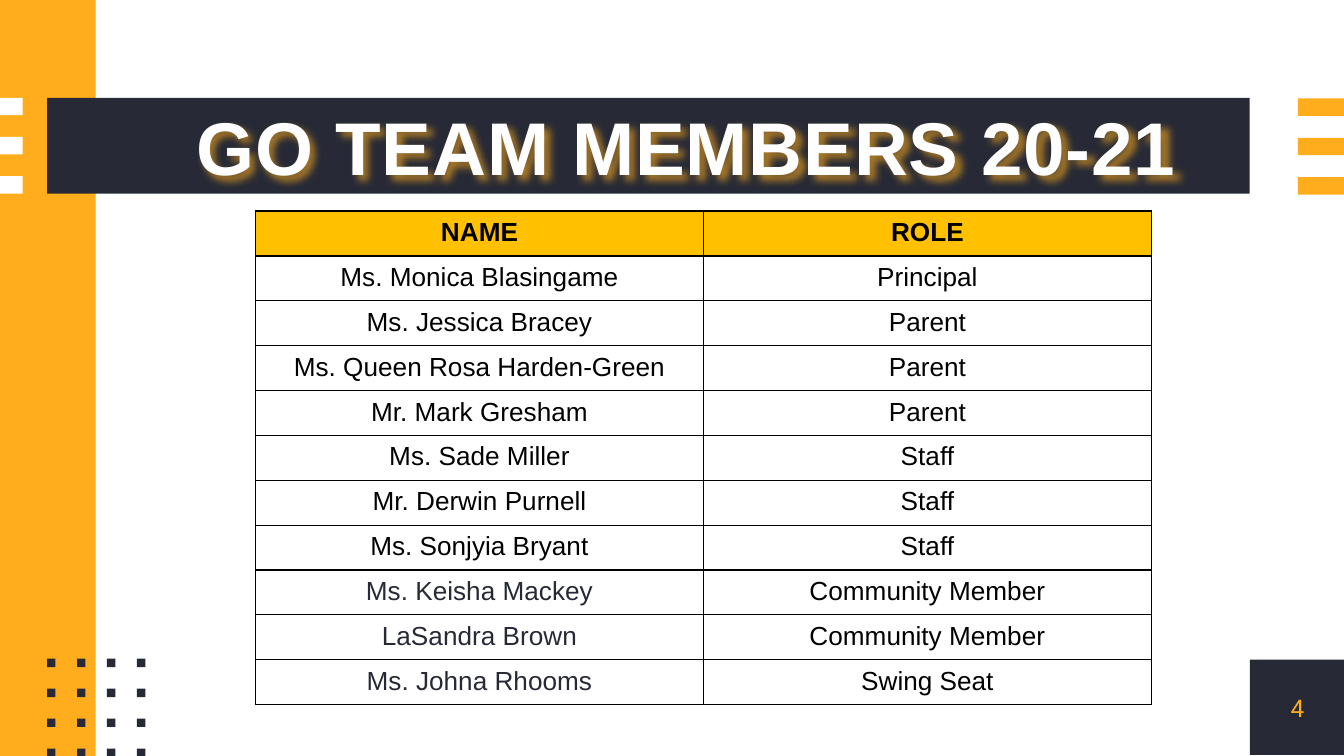
from itertools import product
from lxml.etree import SubElement as Sub, Element as Elem
from pptx import Presentation as Deck
from pptx.dml.color import RGBColor as Rgb
from pptx.enum.shapes import MSO_SHAPE as Kind
from pptx.enum.text import MSO_ANCHOR as Anchor, PP_ALIGN as Align
from pptx.oxml.ns import qn
from pptx.util import Cm, Pt

HUES = {"dark": "272A36", "gold": "FFAD1D", "head": "FFC000",
        "white": "FFFFFF", "pale": "FEFEFE", "black": "000000"}

TEAM = [
    ("NAME", "ROLE"),
    ("Ms. Monica Blasingame", "Principal"),
    ("Ms. Jessica Bracey", "Parent"),
    ("Ms. Queen Rosa Harden-Green", "Parent"),
    ("Mr. Mark Gresham", "Parent"),
    ("Ms. Sade Miller", "Staff"),
    ("Mr. Derwin Purnell", "Staff"),
    ("Ms. Sonjyia Bryant", "Staff"),
    ("Ms. Keisha Mackey", "Community Member"),
    ("LaSandra Brown", "Community Member"),
    ("Ms. Johna Rhooms", "Swing Seat"),
]


def tint(hue):
    return Rgb.from_string(HUES[hue])


def paint(host, hue):
    fill = Sub(host, qn("a:solidFill"))
    return Sub(fill, qn("a:srgbClr"), val=HUES[hue])


def block(slide, box, hue):
    rect = slide.shapes.add_shape(Kind.RECTANGLE, *map(Cm, box))
    rect.shadow.inherit = False
    rect.fill.solid()
    rect.fill.fore_color.rgb = tint(hue)
    rect.line.fill.background()
    return rect


def write(frame, text, size, hue, face="Arial", bold=False):
    para = frame.paragraphs[0]
    para.alignment = Align.CENTER
    run = para.add_run()
    run.text = text
    font = run.font
    font.size, font.name, font.bold = Pt(size), face, bold
    font.color.rgb = tint(hue)
    return run


def bars(slide, box, hue):
    left, top, width, height = box
    thick = 0.33
    step = (height - thick) / 2
    for row in range(3):
        block(slide, (left, top + row * step, width, thick), hue)


def dots(slide, box):
    left, top, width, height = box
    side = 0.16
    for row, col in product(range(4), repeat=2):
        x = left + col * (width - side) / 3
        y = top + row * (height - side) / 3
        block(slide, (x, y, side, side), "dark")


def page(slide, box):
    frame = block(slide, box, "dark").text_frame
    frame.margin_left = frame.margin_right = 0
    frame.margin_top = frame.margin_bottom = 0
    frame.vertical_anchor = Anchor.MIDDLE
    write(frame, "4", 13, "gold", "Roboto")


def title(slide, box):
    text = slide.shapes.add_textbox(*map(Cm, box))
    text.text_frame.word_wrap = False
    run = write(text.text_frame, "GO TEAM MEMBERS 20-21", 40, "pale", bold=True)
    props = run.font._element
    props.set("spc", "50")
    line = Elem(qn("a:ln"), w=str(Pt(0.75)))
    paint(line, "gold")
    props.insert(0, line)
    glow = Sub(text._element.spPr, qn("a:effectLst"))
    shade = Sub(glow, qn("a:outerShdw"), blurRad=str(Pt(4)),
                dist=str(Pt(3)), dir="2700000", algn="tl")
    color = Sub(shade, qn("a:srgbClr"), val=HUES["gold"])
    Sub(color, qn("a:alpha"), val="60000")


def edge(cell):
    props = cell._tc.get_or_add_tcPr()
    for spot, side in enumerate(("lnL", "lnR", "lnT", "lnB")):
        line = Elem(qn(f"a:{side}"), w=str(Pt(0.75)))
        paint(line, "black")
        props.insert(spot, line)


def roster(slide, box):
    grid = slide.shapes.add_table(len(TEAM), 2, *map(Cm, box)).table
    for r, pair in enumerate(TEAM):
        for c, text in enumerate(pair):
            cell = grid.cell(r, c)
            if r == 0:
                cell.fill.solid()
                cell.fill.fore_color.rgb = tint("head")
            else:
                cell.fill.background()
            edge(cell)
            hue = "dark" if r > 7 and c == 0 else "black"
            write(cell.text_frame, text, 14, hue, bold=r == 0)


def main():
    deck = Deck()
    deck.slide_width, deck.slide_height = Cm(25.4), Cm(14.29)
    slide = deck.slides.add_slide(deck.slide_layouts[6])
    block(slide, (0, 0, 1.81, 14.29), "gold")
    block(slide, (0.89, 1.85, 22.73, 1.81), "dark")
    bars(slide, (0, 1.85, 0.43, 1.81), "white")
    dots(slide, (0.89, 12.45, 1.86, 1.86))
    bars(slide, (24.53, 1.86, 0.87, 1.82), "gold")
    page(slide, (23.62, 12.47, 1.8, 1.8))
    title(slide, (3.35, 1.78, 19.25, 1.96))
    roster(slide, (4.83, 3.99, 16.93, 9.33))
    deck.save("out.pptx")


if __name__ == "__main__":
    main()
